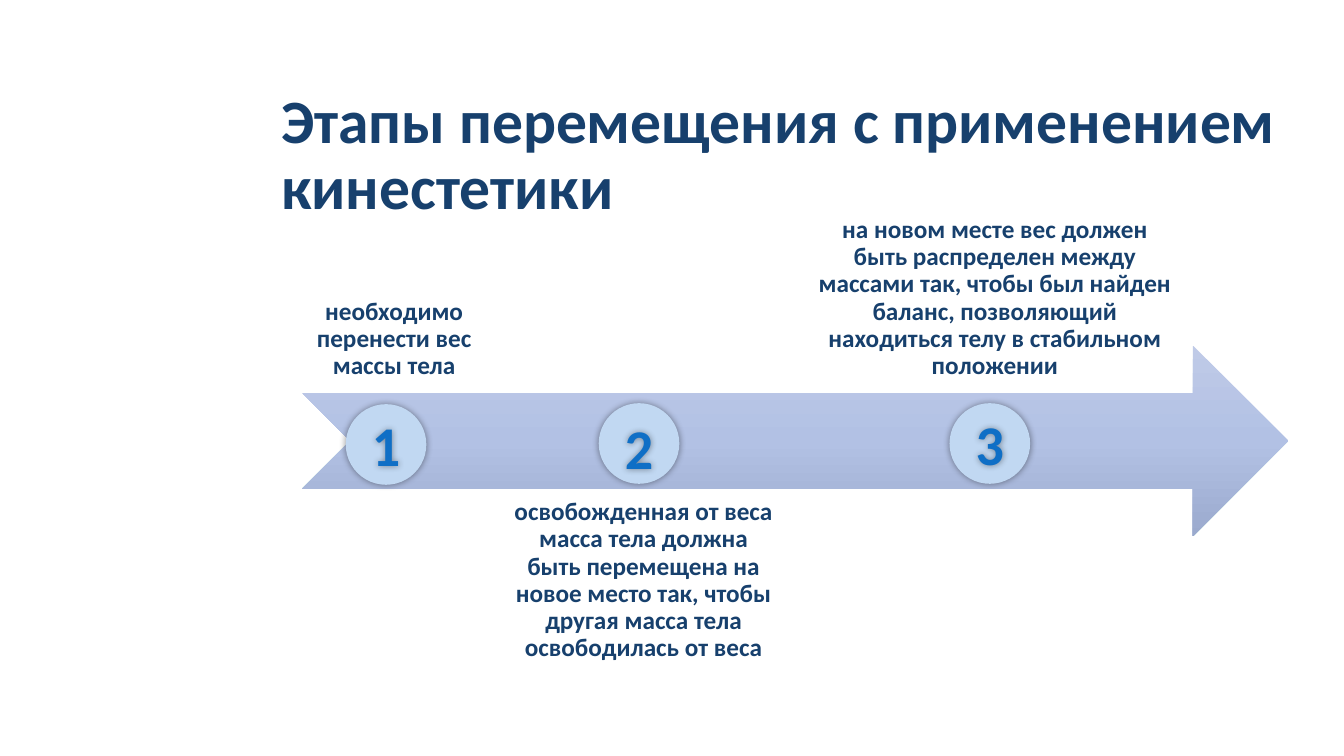
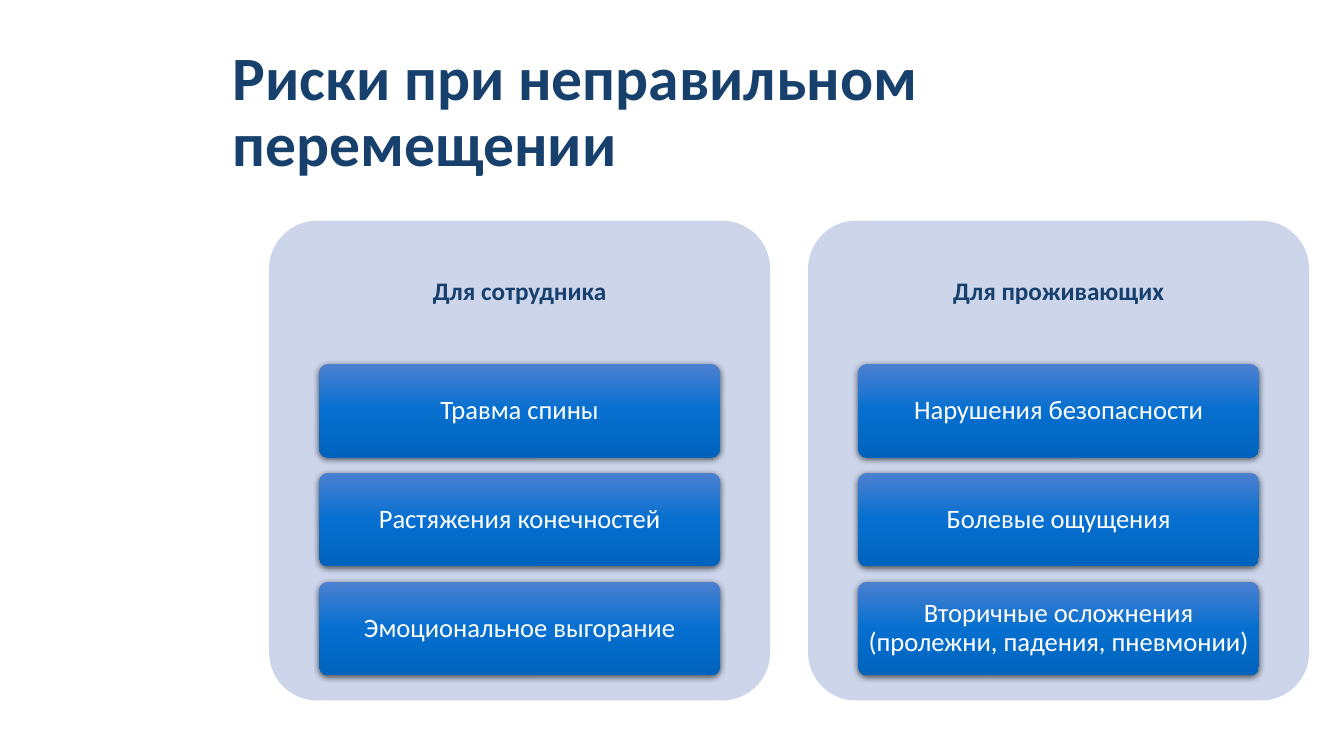
from dataclasses import dataclass
from typing import Any, NamedTuple

from pptx import Presentation
from pptx.dml.color import RGBColor
from pptx.enum.shapes import MSO_SHAPE
from pptx.enum.text import MSO_ANCHOR, MSO_AUTO_SIZE, PP_ALIGN
from pptx.oxml import parse_xml
from pptx.oxml.ns import nsdecls, qn
from pptx.util import Emu, Inches, Pt

# Shared look
HEX = {
    "navy": "17406D",
    "blue": "0F6FC6",
    "white": "FFFFFF",
    "disc": "C1D8F2",
    "panel": "CCD5EA",
    "black": "000000",
}
ARROW = ("BFCAE7", "B2C1E4", "9BAACE")
CARD = ("4C80D0", "066FCF", "0063BD")

# Grid: 40 columns by 22.5 rows of square cells
WIDE, HIGH = Inches(13.333), Inches(7.5)
CELL = WIDE / 40


class Box(NamedTuple):
    col: float
    row: float
    cols: float
    rows: float

    def emu(self) -> tuple[Emu, ...]:
        return tuple(Emu(round(v * CELL)) for v in self)


class Shade(NamedTuple):
    alpha: int
    blur: float
    dist: float


GLOW = Shade(40, 5, 0)
DROP = Shade(63, 4.5, 1.5)


@dataclass(frozen=True)
class Style:
    size: float
    color: str
    bold: bool = True
    align: Any = PP_ALIGN.CENTER
    anchor: Any = MSO_ANCHOR.MIDDLE
    gap: float = 0.9
    pad: tuple[float, float] = (0.1, 0.05)


TITLE = Style(44, "navy", align=PP_ALIGN.LEFT)
ABOVE = Style(18, "navy", anchor=MSO_ANCHOR.BOTTOM, pad=(0.14, 0.14))
BELOW = Style(18, "navy", anchor=MSO_ANCHOR.TOP, pad=(0.14, 0.14))
DIGIT = Style(40, "blue", anchor=MSO_ANCHOR.TOP, gap=1.0)
HEAD = Style(18, "navy", pad=(0.07, 0.07))
ITEM = Style(19, "white", bold=False, pad=(0.05, 0.04))


@dataclass(frozen=True)
class Step:
    text: str
    col: float
    cols: float
    disc: tuple[float, float]
    drop: float
    style: Style


@dataclass(frozen=True)
class Panel:
    head: str
    items: tuple[str, ...]


# Content
STEPS = (
    Step("необходимо перенести вес массы тела",
         9, 5.46, (10.29, 12.03), 0.03, ABOVE),
    Step("освобожденная от веса масса тела должна быть перемещена на новое "
         "место так, чтобы другая масса тела освободилась от веса",
         14.76, 8.79, (17.82, 12), 0.15, BELOW),
    Step("на новом месте вес должен быть распределен между массами так, чтобы "
         "был найден баланс, позволяющий находиться телу в стабильном положении",
         23.82, 11.58, (28.26, 12), 0.03, ABOVE),
)
PANELS = (
    Panel("Для сотрудника",
          ("Травма спины", "Растяжения конечностей", "Эмоциональное выгорание")),
    Panel("Для проживающих",
          ("Нарушения безопасности", "Болевые ощущения",
           "Вторичные осложнения (пролежни, падения, пневмонии)")),
)


# Drawing helpers
def apply(obj: Any, vals: dict[str, Any]) -> None:
    for key, val in vals.items():
        setattr(obj, key, val)


def write(shape: Any, text: str, style: Style) -> None:
    side, edge = (Inches(v) for v in style.pad)
    frame = shape.text_frame
    apply(frame, {
        "text": text, "word_wrap": True, "auto_size": MSO_AUTO_SIZE.NONE,
        "vertical_anchor": style.anchor, "margin_left": side,
        "margin_right": side, "margin_top": edge, "margin_bottom": edge,
    })
    para = frame.paragraphs[0]
    apply(para, {"alignment": style.align, "line_spacing": style.gap})
    font = para.runs[0].font
    apply(font, {"name": "Calibri", "size": Pt(style.size), "bold": style.bold})
    font.color.rgb = RGBColor.from_string(HEX[style.color])


def cast(shape: Any, shade: Shade) -> None:
    shape.shadow.inherit = False
    shape._element.spPr.find(qn("a:effectLst")).append(parse_xml(
        f'<a:outerShdw {nsdecls("a")} blurRad="{Pt(shade.blur)}" '
        f'dist="{Pt(shade.dist)}" dir="5400000" algn="ctr" rotWithShape="0">'
        f'<a:srgbClr val="{HEX["black"]}"><a:alpha val="{shade.alpha * 1000}"/>'
        '</a:srgbClr></a:outerShdw>'))


def blend(shape: Any, tones: tuple[str, ...]) -> None:
    shape.fill.gradient()
    shape.fill.gradient_angle = 270
    stops = shape._element.spPr.find(qn("a:gradFill")).find(qn("a:gsLst"))
    for stop in list(stops):
        stops.remove(stop)
    for num, tone in enumerate(tones):
        stops.append(parse_xml(
            f'<a:gs {nsdecls("a")} pos="{num * 50000}">'
            f'<a:srgbClr val="{tone}"/></a:gs>'))


def draw(slide: Any, kind: Any, box: Box, fill: str | tuple[str, ...],
         shade: Shade | None = None) -> Any:
    shape = slide.shapes.add_shape(kind, *box.emu())
    if isinstance(fill, tuple):
        blend(shape, fill)
    else:
        shape.fill.solid()
        shape.fill.fore_color.rgb = RGBColor.from_string(HEX[fill])
    shape.line.fill.background()
    shape.shadow.inherit = False
    if shade:
        cast(shape, shade)
    return shape


def label(slide: Any, box: Box, text: str, style: Style) -> Any:
    shape = slide.shapes.add_textbox(*box.emu())
    write(shape, text, style)
    return shape


def block(slide: Any, box: Box, fill: str | tuple[str, ...],
          shade: Shade | None = None) -> Any:
    shape = draw(slide, MSO_SHAPE.ROUNDED_RECTANGLE, box, fill, shade)
    shape.adjustments[0] = 0.1
    return shape


def start(deck: Any, text: str, col: float, row: float) -> Any:
    slide = deck.slides.add_slide(deck.slide_layouts[5])
    title = slide.shapes.title
    spot = Box(col, row, 30.96, 4.35).emu()
    apply(title, dict(zip(("left", "top", "width", "height"), spot)))
    write(title, text, TITLE)
    return slide


# Slides
def stages(deck: Any) -> None:
    slide = start(deck, "Этапы перемещения с применением кинестетики", 8.07, 2.49)
    high = 5.67
    draw(slide, MSO_SHAPE.NOTCHED_RIGHT_ARROW, Box(9, 10.29, 29.34, high), ARROW)
    for num, step in enumerate(STEPS, 1):
        row = 6.06 if step.style is ABOVE else 14.43
        label(slide, Box(step.col, row, step.cols, high), step.text, step.style)
        col, top = step.disc
        draw(slide, MSO_SHAPE.OVAL, Box(col, top, 2.4, 2.4), "disc", GLOW)
        digit = label(slide, Box(col, top + step.drop, 2.4, 2.31), str(num), DIGIT)
        cast(digit, GLOW)


def risks(deck: Any) -> None:
    slide = start(deck, "Риски при неправильном перемещении", 6.63, 1.2)
    for side, panel in enumerate(PANELS):
        col, row, cols = 8.01 + side * 16.04, 6.57, 14.91
        block(slide, Box(col, row, cols, 14.28), "panel")
        label(slide, Box(col, row, cols, 4.29), panel.head, HEAD)
        wide = cols * 0.8
        for num, item in enumerate(panel.items):
            spot = Box(col + cols * 0.1, 10.83 + num * 3.24, wide, 2.79)
            write(block(slide, spot, CARD, DROP), item, ITEM)


def main() -> None:
    deck = Presentation()
    apply(deck, {"slide_width": WIDE, "slide_height": HIGH})
    stages(deck)
    risks(deck)
    deck.save("out.pptx")


if __name__ == "__main__":
    main()
